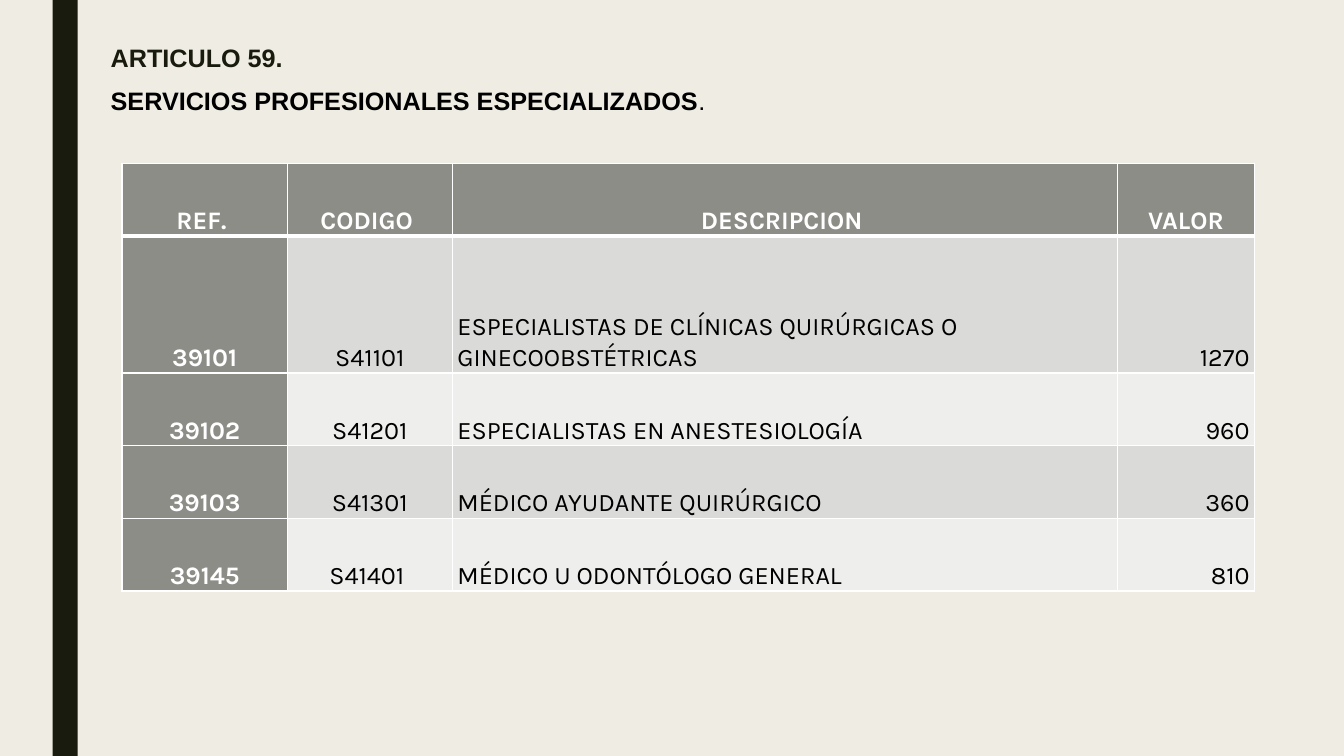
import lxml.etree
import pptx
import pptx.dml.color
import pptx.enum.shapes
import pptx.enum.text
import pptx.oxml.ns
import pptx.util

Pt = pptx.util.Pt
ALIGN = pptx.enum.text.PP_ALIGN
COLORS = {
    "background": "EFEDE3",
    "bar": "191B0E",
    "black": "000000",
    "white": "FFFFFF",
    "header": "8C8D86",
    "odd_row": "DADBD9",
    "even_row": "EEEEED",
}
COLUMN_WIDTHS = [118, 118, 475, 98]
ROW_HEIGHTS = [51.9, 98, 51.9, 51.9, 51.9]
COLUMN_ALIGNMENTS = [ALIGN.CENTER, ALIGN.CENTER, ALIGN.LEFT, ALIGN.RIGHT]
FEES = [
    ["REF. ", "CODIGO ", "DESCRIPCION ", "VALOR"],
    ["39101", " S41101 ", "ESPECIALISTAS DE CLÍNICAS QUIRÚRGICAS O GINECOOBSTÉTRICAS", "1270"],
    ["39102", "S41201", "ESPECIALISTAS EN ANESTESIOLOGÍA", "960"],
    ["39103", "S41301", "MÉDICO AYUDANTE QUIRÚRGICO", "360"],
    ["39145", "S41401 ", "MÉDICO U ODONTÓLOGO GENERAL", "810"],
]


def rgb(name):
    return pptx.dml.color.RGBColor.from_string(COLORS[name])


def style_paragraph(paragraph, font_name, color):
    paragraph.line_spacing = 1.07
    paragraph.font.name = font_name
    paragraph.font.size = Pt(18)
    paragraph.font.color.rgb = rgb(color)


def add_side_bar(slide, left, top, width, height):
    bar = slide.shapes.add_shape(
        pptx.enum.shapes.MSO_SHAPE.RECTANGLE, Pt(left), Pt(top), Pt(width), Pt(height))
    bar.shadow.inherit = False
    bar.fill.solid()
    bar.fill.fore_color.rgb = rgb("bar")
    bar.line.fill.background()


def add_heading(slide, left, top, width, height, bold_text, color, plain_text=""):
    heading = slide.shapes.add_textbox(Pt(left), Pt(top), Pt(width), Pt(height))
    heading.text_frame.word_wrap = False
    heading.text_frame.auto_size = pptx.enum.text.MSO_AUTO_SIZE.SHAPE_TO_FIT_TEXT
    paragraph = heading.text_frame.paragraphs[0]
    style_paragraph(paragraph, "Arial", color)
    for text, bold in ((bold_text, True), (plain_text, False)):
        if text:
            run = paragraph.add_run()
            run.text = text
            run.font.bold = bold


def set_borders(cell, widths):
    properties = cell._tc.get_or_add_tcPr()
    qn = pptx.oxml.ns.qn
    for position, (side, width) in enumerate(widths.items()):
        border = lxml.etree.Element(qn(f"a:{side}"), w=str(Pt(width)))
        fill = lxml.etree.SubElement(border, qn("a:solidFill"))
        lxml.etree.SubElement(fill, qn("a:srgbClr"), val=COLORS["white"])
        properties.insert(position, border)


def add_fee_table(slide, left, top, width, height):
    table = slide.shapes.add_table(
        len(FEES), len(COLUMN_WIDTHS), Pt(left), Pt(top), Pt(width), Pt(height)).table
    for column, column_width in zip(table.columns, COLUMN_WIDTHS):
        column.width = Pt(column_width)
    for row, row_height in zip(table.rows, ROW_HEIGHTS):
        row.height = Pt(row_height)
    for r, fee in enumerate(FEES):
        for c, text in enumerate(fee):
            is_header = r == 0 or c == 0
            cell = table.cell(r, c)
            cell.text = text
            cell.vertical_anchor = pptx.enum.text.MSO_ANCHOR.BOTTOM
            cell.margin_left = cell.margin_right = Pt(3.6)
            cell.margin_top = cell.margin_bottom = 0
            cell.fill.solid()
            body_fill = "odd_row" if r % 2 else "even_row"
            cell.fill.fore_color.rgb = rgb("header" if is_header else body_fill)
            paragraph = cell.text_frame.paragraphs[0]
            style_paragraph(paragraph, "Karla", "white" if is_header else "black")
            paragraph.font.bold = is_header
            paragraph.alignment = ALIGN.CENTER if r == 0 else COLUMN_ALIGNMENTS[c]
            set_borders(cell, {
                "lnL": 1, "lnR": 1, "lnT": 3 if r == 1 else 1, "lnB": 3 if r == 0 else 1})


def add_fee_slide(presentation):
    slide = presentation.slides.add_slide(presentation.slide_layouts[6])
    slide.background.fill.solid()
    slide.background.fill.fore_color.rgb = rgb("background")
    add_side_bar(slide, 37.5, 0, 18, 540)
    add_heading(slide, 72, 25.2, 144, 31, "ARTICULO 59.", "bar")
    add_fee_table(slide, 87.2, 116.6, sum(COLUMN_WIDTHS), sum(ROW_HEIGHTS))
    add_heading(slide, 72, 55.6, 443.5, 31,
                "SERVICIOS PROFESIONALES ESPECIALIZADOS", "black", ".")


def main():
    presentation = pptx.Presentation()
    presentation.slide_width = Pt(960)
    presentation.slide_height = Pt(540)
    add_fee_slide(presentation)
    presentation.save("out.pptx")


if __name__ == "__main__":
    main()
